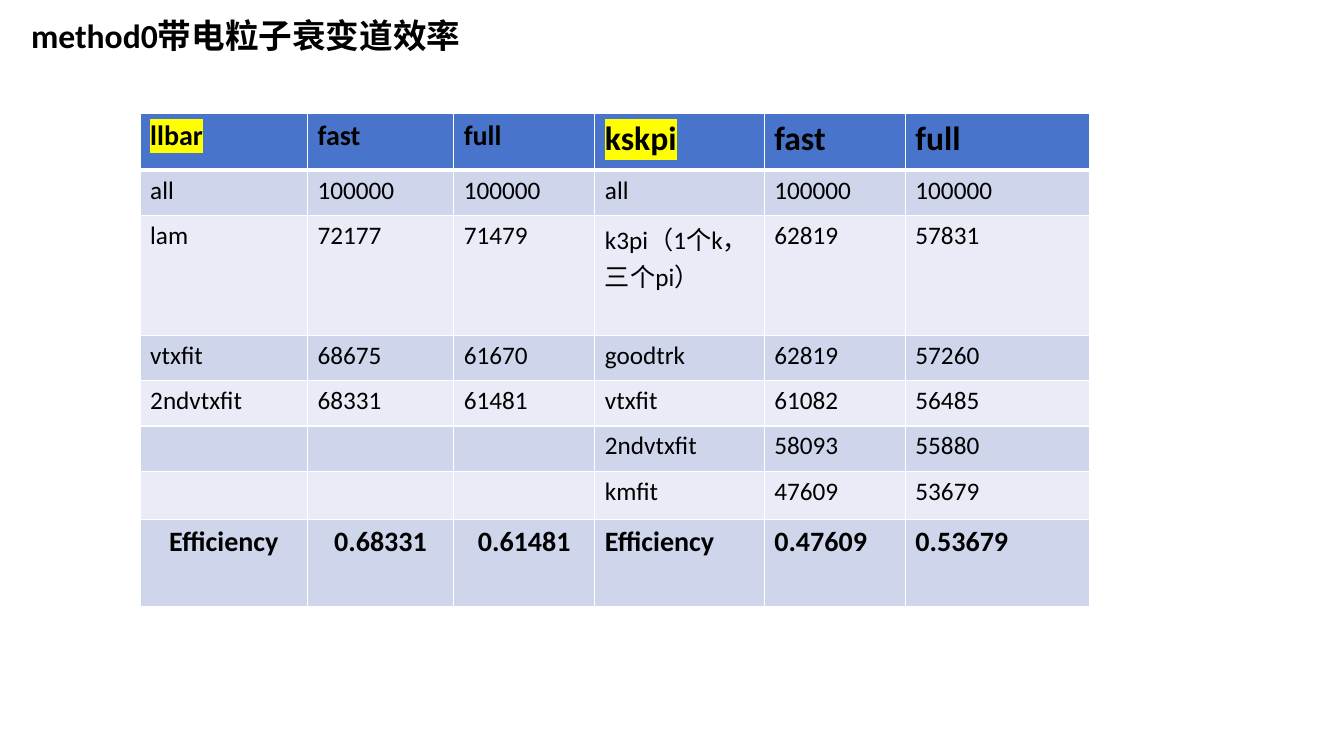
from dataclasses import dataclass

from lxml.etree import SubElement
from pptx import Presentation
from pptx.dml.color import RGBColor
from pptx.enum.text import MSO_AUTO_SIZE, PP_ALIGN
from pptx.oxml.ns import qn
from pptx.util import Inches, Pt


@dataclass(frozen=True)
class Theme:
    font: str = "Calibri"
    ink: str = "000000"
    header: str = "4874CB"
    bands: tuple[str, str] = ("CFD6EC", "E9EBF6")
    rule: str = "FFFFFF"
    marker: str = "FFFF00"
    large: int = 24
    medium: int = 20
    body: int = 18
    thin: int = 1
    thick: int = 3


@dataclass(frozen=True)
class Channel:
    """Three table columns: selection step, fast and full simulation."""
    name: str
    steps: tuple[tuple[str, str, str], ...]
    efficiency: tuple[str, str]
    header_size: int
    efficiency_align: PP_ALIGN


THEME = Theme()
COLUMN_WIDTHS = (1.66, 1.45, 1.4, 1.68, 1.4, 1.83)
ROW_HEIGHTS = (0.56, 0.45, 0.78, 0.45, 0.45, 0.45, 0.48, 0.86)
LAST_ROW = len(ROW_HEIGHTS) - 1

CHANNELS = (
    Channel("llbar", (
        ("all", "100000", "100000"),
        ("lam", "72177", "71479"),
        ("vtxfit", "68675", "61670"),
        ("2ndvtxfit", "68331", "61481"),
    ), ("0.68331", "0.61481"), THEME.medium, PP_ALIGN.CENTER),
    Channel("kskpi", (
        ("all", "100000", "100000"),
        ("k3pi（1个k，三个pi）", "62819", "57831"),
        ("goodtrk", "62819", "57260"),
        ("vtxfit", "61082", "56485"),
        ("2ndvtxfit", "58093", "55880"),
        ("kmfit", "47609", "53679"),
    ), ("0.47609", "0.53679"), THEME.large, PP_ALIGN.LEFT),
)


def write(frame, text: str, size: int, bold: bool, align: PP_ALIGN = PP_ALIGN.LEFT,
          marked: bool = False) -> None:
    paragraph = frame.paragraphs[0]
    paragraph.alignment = align
    run = paragraph.add_run()
    run.text = text
    for attribute, value in {"size": Pt(size), "bold": bold, "name": THEME.font}.items():
        setattr(run.font, attribute, value)
    run.font.color.rgb = RGBColor.from_string(THEME.ink)
    if marked:
        properties = run.font._element
        highlight = SubElement(properties, qn("a:highlight"))
        SubElement(highlight, qn("a:srgbClr"), val=THEME.marker)
        properties.find(qn("a:solidFill")).addnext(highlight)


def style_cell(cell, row: int) -> None:
    # Borders come before the fill in the cell properties
    properties = cell._tc.get_or_add_tcPr()
    heavy_side = {0: "B", 1: "T"}.get(row)
    for side in "LRTB":
        width = THEME.thick if side == heavy_side else THEME.thin
        line = SubElement(properties, qn(f"a:ln{side}"), w=str(Pt(width)))
        SubElement(SubElement(line, qn("a:solidFill")), qn("a:srgbClr"), val=THEME.rule)
    cell.fill.solid()
    color = THEME.bands[(row - 1) % 2] if row else THEME.header
    cell.fill.fore_color.rgb = RGBColor.from_string(color)


def fill_channel(table, channel: Channel, first_column: int) -> None:
    for offset, heading in enumerate((channel.name, "fast", "full")):
        write(table.cell(0, first_column + offset).text_frame, heading,
              channel.header_size, True, marked=offset == 0)
    for row, step in enumerate(channel.steps, start=1):
        for offset, value in enumerate(step):
            write(table.cell(row, first_column + offset).text_frame, value, THEME.body, False)
    for offset, value in enumerate(("Efficiency", *channel.efficiency)):
        write(table.cell(LAST_ROW, first_column + offset).text_frame, value,
              THEME.medium, True, channel.efficiency_align)


def add_efficiency_table(slide) -> None:
    table = slide.shapes.add_table(
        len(ROW_HEIGHTS), len(COLUMN_WIDTHS), Inches(1.39), Inches(1.13),
        Inches(sum(COLUMN_WIDTHS)), Inches(sum(ROW_HEIGHTS))).table
    for column, width in zip(table.columns, COLUMN_WIDTHS):
        column.width = Inches(width)
    for index, (row, height) in enumerate(zip(table.rows, ROW_HEIGHTS)):
        row.height = Inches(height)
        for cell in row.cells:
            style_cell(cell, index)
    for index, channel in enumerate(CHANNELS):
        fill_channel(table, channel, 3 * index)


def add_title(slide) -> None:
    title = slide.shapes.add_textbox(Inches(0.21), Inches(0.1), Inches(6.03), Inches(0.5))
    title.text_frame.word_wrap = True
    title.text_frame.auto_size = MSO_AUTO_SIZE.SHAPE_TO_FIT_TEXT
    write(title.text_frame, "method0带电粒子衰变道效率", THEME.large, True)


def main() -> None:
    presentation = Presentation()
    presentation.slide_width = Inches(13.33)
    presentation.slide_height = Inches(7.5)
    slide = presentation.slides.add_slide(presentation.slide_layouts[6])
    add_efficiency_table(slide)
    add_title(slide)
    presentation.save("out.pptx")


if __name__ == "__main__":
    main()
